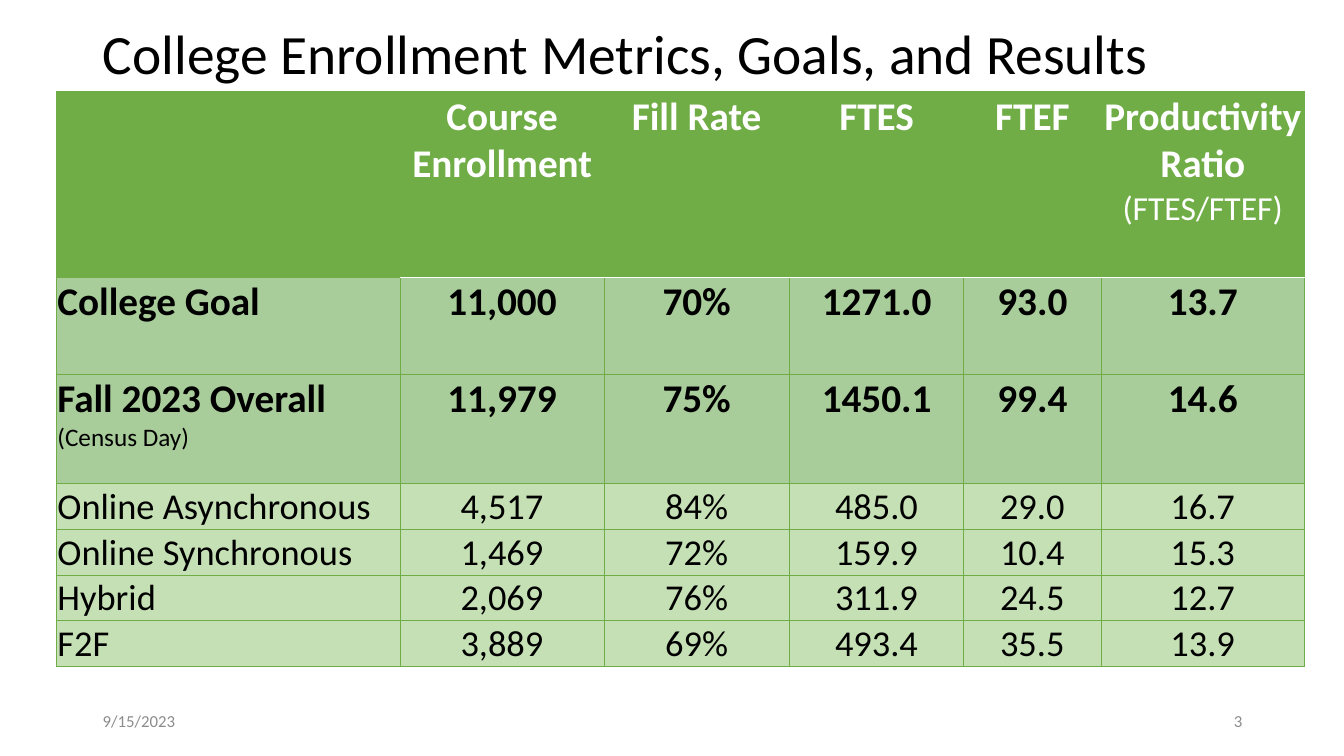
from dataclasses import dataclass
from lxml import etree
from pptx import Presentation
from pptx.dml.color import RGBColor
from pptx.enum.text import MSO_ANCHOR, MSO_AUTO_SIZE, PP_ALIGN
from pptx.oxml.ns import qn
from pptx.util import Inches, Pt

LEFT, MID, RIGHT = PP_ALIGN.LEFT, PP_ALIGN.CENTER, PP_ALIGN.RIGHT
CENTRE = MSO_ANCHOR.MIDDLE
NO_FIT = MSO_AUTO_SIZE.NONE

TITLE = "College Enrollment Metrics, Goals, and Results"
HEAD = [
    "",
    "Course Enrollment",
    "Fill Rate",
    "FTES",
    "FTEF",
    ("Productivity Ratio ", "(FTES/FTEF)"),
]
GOALS = [
    ["College Goal", "11,000", "70%", "1271.0", "93.0", "13.7"],
    [("Fall 2023 Overall", "(Census Day)"), "11,979", "75%", "1450.1", "99.4", "14.6"],
]
MODES = [
    ["Online Asynchronous", "4,517", "84%", "485.0", "29.0", "16.7"],
    ["Online Synchronous", "1,469", "72%", "159.9", "10.4", "15.3"],
    ["Hybrid", "2,069", "76%", "311.9", "24.5", "12.7"],
    ["F2F", "3,889", "69%", "493.4", "35.5", "13.9"],
]
FOOT = [("9/15/2023", LEFT), ("3", RIGHT)]

WIDE, HIGH = 13.33, 7.5
EDGE, SPAN = 0.92, 11.5
COLS = [3.41, 2.02, 1.84, 1.73, 1.36, 2.02]
ROWS = [1.84, 0.96, 1.09] + [0.45] * len(MODES)
GRID = (0.56, 0.91, sum(COLS), sum(ROWS))
NOTE_W, NOTE_H, NOTE_Y = 3, 0.4, 6.95


@dataclass(frozen=True)
class Theme:
    font: str = "Calibri"
    ink: str = "000000"
    white: str = "FFFFFF"
    green: str = "70AD47"
    sage: str = "A9CD9A"
    pale: str = "C5E0B4"
    grey: str = "8C8C8C"
    title: float = 39.6
    bold: float = 28
    body: float = 26
    ratio: float = 24
    census: float = 18
    foot: float = 12


LOOK = Theme()


def add_run(para, text, size, color, bold=False):
    run = para.add_run()
    run.text = text
    font = run.font
    font.name, font.size, font.bold = LOOK.font, Pt(size), bold
    font.color.rgb = RGBColor.from_string(color)


def add_edge(cell, side, color, width):
    props = cell._tc.get_or_add_tcPr()
    line = etree.SubElement(props, qn("a:ln" + side), w=str(Pt(width)))
    solid = etree.SubElement(line, qn("a:solidFill"))
    etree.SubElement(solid, qn("a:srgbClr"), val=color)


def fill_cell(cell, row, col, item):
    main, extra = item if isinstance(item, tuple) else (item, "")
    top, strong = row == 0, row <= len(GOALS)
    ink = LOOK.white if top else LOOK.ink
    cell.margin_left = cell.margin_right = cell.margin_top = Inches(0.01)
    cell.margin_bottom = 0
    for side in "LRTB":
        split = col > 0 and (row, side) in ((0, "B"), (1, "T"))
        add_edge(cell, side, LOOK.white if split else LOOK.green, 1 if split else 0.5)
    cell.fill.solid()
    tone = LOOK.green if top else LOOK.sage if strong else LOOK.pale
    cell.fill.fore_color.rgb = RGBColor.from_string(tone)
    frame = cell.text_frame
    para = frame.paragraphs[0]
    para.alignment = MID if col else LEFT
    if main:
        add_run(para, main, LOOK.bold if strong else LOOK.body, ink, strong)
    if extra:
        if not top:
            para = frame.add_paragraph()
        add_run(para, extra, LOOK.ratio if top else LOOK.census, ink)


def add_title(slide):
    title = slide.shapes.title
    title.left, title.top = Inches(EDGE), Inches(0.22)
    title.width, title.height = Inches(SPAN), Inches(0.68)
    frame = title.text_frame
    frame.auto_size, frame.vertical_anchor = NO_FIT, CENTRE
    para = frame.paragraphs[0]
    para.alignment, para.line_spacing = LEFT, 0.9
    add_run(para, TITLE, LOOK.title, LOOK.ink)


def add_grid(slide):
    data = [HEAD] + GOALS + MODES
    box = [Inches(n) for n in GRID]
    table = slide.shapes.add_table(len(ROWS), len(COLS), *box).table
    table.horz_banding = False
    for col, width in zip(table.columns, COLS):
        col.width = Inches(width)
    for row, height in zip(table.rows, ROWS):
        row.height = Inches(height)
    for r, items in enumerate(data):
        for c, item in enumerate(items):
            fill_cell(table.cell(r, c), r, c, item)


def add_foot(slide):
    for text, align in FOOT:
        x = EDGE if align == LEFT else EDGE + SPAN - NOTE_W
        box = [Inches(n) for n in (x, NOTE_Y, NOTE_W, NOTE_H)]
        frame = slide.shapes.add_textbox(*box).text_frame
        frame.word_wrap, frame.vertical_anchor = True, CENTRE
        para = frame.paragraphs[0]
        para.alignment = align
        add_run(para, text, LOOK.foot, LOOK.grey)


def main():
    deck = Presentation()
    deck.slide_width, deck.slide_height = Inches(WIDE), Inches(HIGH)
    slide = deck.slides.add_slide(deck.slide_layouts[5])
    add_title(slide)
    add_grid(slide)
    add_foot(slide)
    deck.save("out.pptx")


if __name__ == "__main__":
    main()
